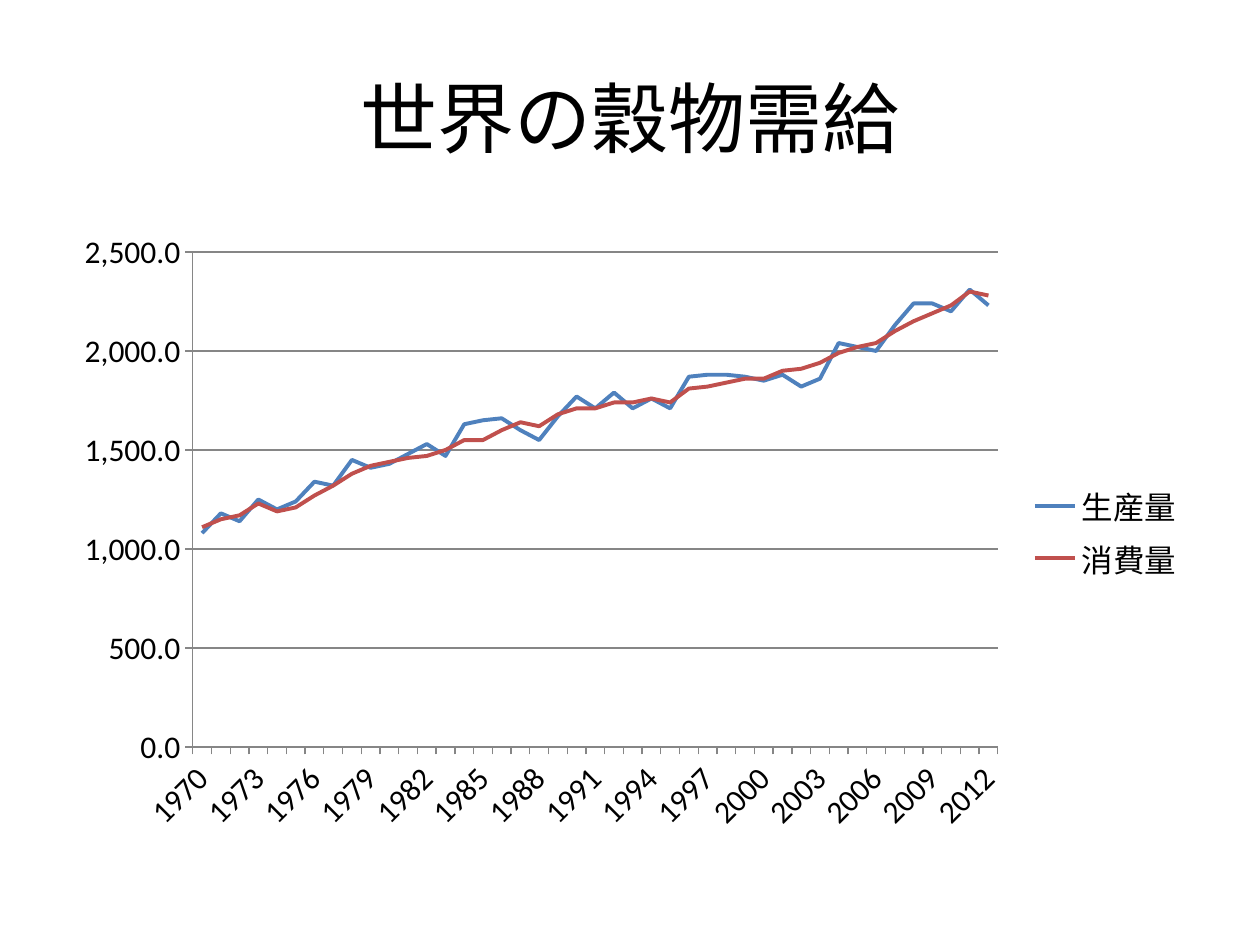
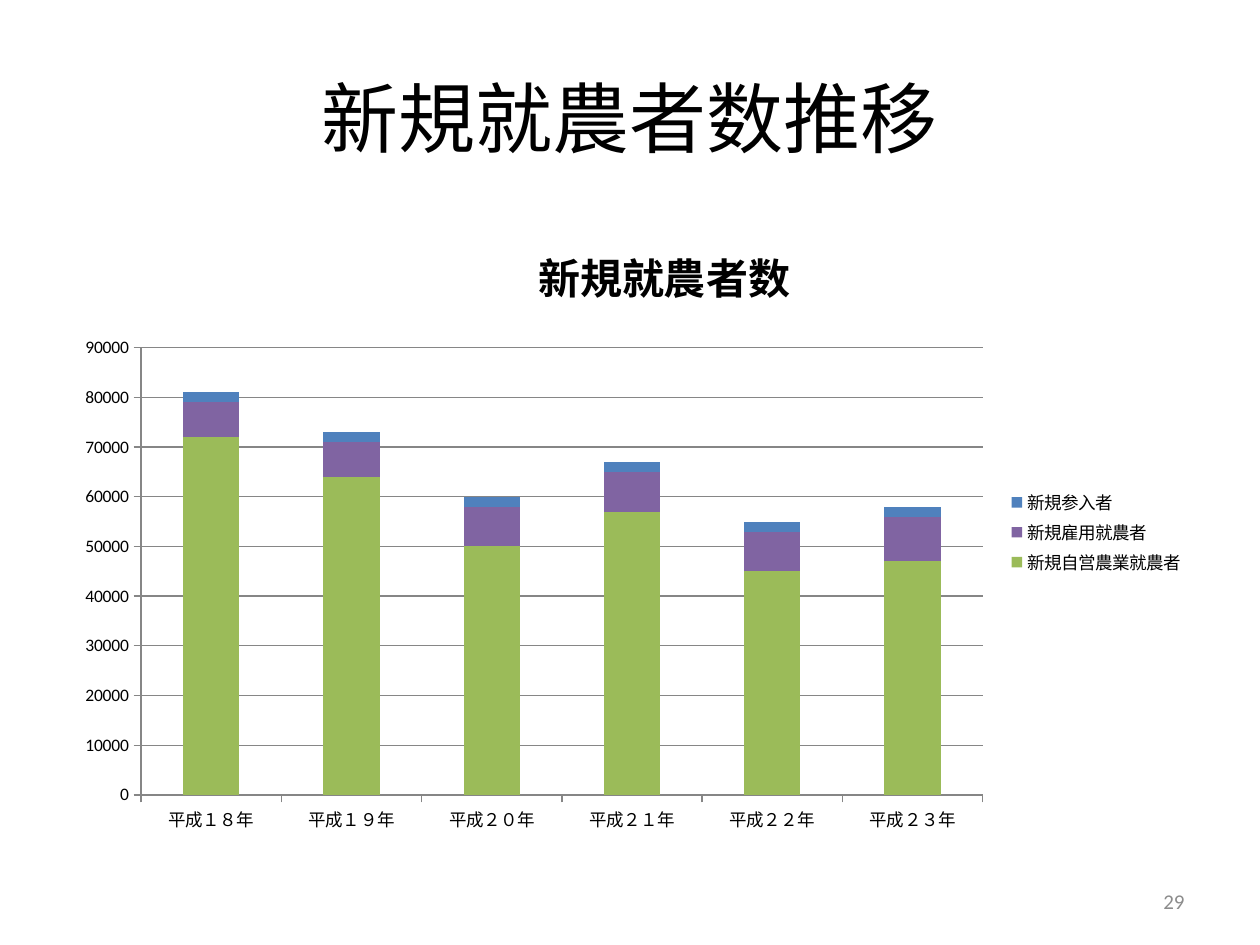
from itertools import chain
from typing import NamedTuple

from lxml import etree
from pptx import Presentation
from pptx.chart.data import CategoryChartData
from pptx.dml.color import RGBColor
from pptx.enum.chart import XL_CHART_TYPE as ChartType
from pptx.enum.chart import XL_LEGEND_POSITION as LegendPosition
from pptx.enum.chart import XL_TICK_MARK as TickMark
from pptx.enum.text import MSO_ANCHOR as Anchor
from pptx.enum.text import PP_ALIGN as Align
from pptx.oxml.ns import qn
from pptx.util import Inches, Pt

# Shared look
FONT = "Calibri"
BLACK = RGBColor(0x00, 0x00, 0x00)
GRAY = RGBColor(0x8C, 0x8C, 0x8C)
AXIS_GRAY = RGBColor(0x86, 0x86, 0x86)
BLUE = RGBColor(0x4F, 0x81, 0xBD)
RED = RGBColor(0xC0, 0x50, 0x4D)
GREEN = RGBColor(0x9B, 0xBB, 0x59)
PURPLE = RGBColor(0x80, 0x64, 0xA2)
TITLE_SIZE, HEADING_SIZE, NUMBER_SIZE = 44, 24, 12
AXIS_WIDTH, DATA_LINE_WIDTH = Pt(0.75), Pt(2.25)

# Shared places in inches: left, top, width, height
TITLE_BOX = (0.5, 0.3, 9, 1.25)
CHART_BOX = (0.5, 1.75, 9, 4.95)
NUMBER_BOX = (7.17, 6.95, 2.33, 0.4)


class Series(NamedTuple):
    name: str
    color: RGBColor
    values: list


class ValueScale(NamedTuple):
    maximum: int
    step: int
    number_format: str


# Grain: one row per decade, one value per year
FIRST_YEAR = 1970
PRODUCTION_BY_DECADE = [
    [1080, 1180, 1140, 1250, 1200, 1240, 1340, 1320, 1450, 1410],
    [1430, 1480, 1530, 1470, 1630, 1650, 1660, 1600, 1550, 1670],
    [1770, 1710, 1790, 1710, 1760, 1710, 1870, 1880, 1880, 1870],
    [1850, 1880, 1820, 1860, 2040, 2020, 2000, 2130, 2240, 2240],
    [2200, 2310, 2230],
]
CONSUMPTION_BY_DECADE = [
    [1110, 1150, 1170, 1230, 1190, 1210, 1270, 1320, 1380, 1420],
    [1440, 1460, 1470, 1500, 1550, 1550, 1600, 1640, 1620, 1680],
    [1710, 1710, 1740, 1740, 1760, 1740, 1810, 1820, 1840, 1860],
    [1860, 1900, 1910, 1940, 1990, 2020, 2040, 2100, 2150, 2190],
    [2230, 2300, 2280],
]
GRAIN = [
    Series(name, color, list(chain.from_iterable(decades)))
    for name, color, decades in (
        ("生産量", BLUE, PRODUCTION_BY_DECADE),
        ("消費量", RED, CONSUMPTION_BY_DECADE),
    )
]
GRAIN_YEARS = [str(FIRST_YEAR + offset) for offset in range(len(GRAIN[0].values))]
GRAIN_SCALE = ValueScale(2500, 500, "#,##0.0")

# New farmers: Heisei years 18 to 23, written in full-width digits
FULL_WIDTH = str.maketrans("0123456789", "０１２３４５６７８９")
FARMER_YEARS = [f"平成{year}年".translate(FULL_WIDTH) for year in range(18, 24)]
FARMERS = [
    Series("新規自営農業就農者", GREEN, [72000, 64000, 50000, 57000, 45000, 47000]),
    Series("新規雇用就農者", PURPLE, [7000, 7000, 8000, 8000, 8000, 9000]),
    Series("新規参入者", BLUE, [2000] * len(FARMER_YEARS)),
]
FARMER_SCALE = ValueScale(90000, 10000, "General")


# Text
def style_font(font, size, color=BLACK, bold=False):
    font.name = FONT
    font.size = Pt(size)
    font.bold = bold
    font.color.rgb = color


def write_line(box, text, size, color, align):
    frame = box.text_frame
    frame.text = text
    frame.word_wrap = True
    frame.vertical_anchor = Anchor.MIDDLE
    para = frame.paragraphs[0]
    para.alignment = align
    style_font(para.runs[0].font, size, color)


def add_titled_page(deck, title):
    page = deck.slides.add_slide(deck.slide_layouts.get_by_name("Title Only"))
    box = page.shapes.title
    box.left, box.top, box.width, box.height = map(Inches, TITLE_BOX)
    write_line(box, title, TITLE_SIZE, BLACK, Align.CENTER)
    return page


def add_page_number(page, number):
    box = page.shapes.add_textbox(*map(Inches, NUMBER_BOX))
    write_line(box, str(number), NUMBER_SIZE, GRAY, Align.RIGHT)


# Chart parts
def place_in_chart(part, index, place, **settings):
    """Place a chart part; place is left, top and maybe width, height in inches."""
    for old in part.findall(qn("c:layout")):
        part.remove(old)
    layout = etree.Element(qn("c:layout"))
    manual = etree.SubElement(layout, qn("c:manualLayout"))
    settings.update(xMode="edge", yMode="edge")
    # The file holds each length as a fraction of the chart's size
    chart_size = CHART_BOX[2:] * 2
    for name, length, whole in zip("xywh", place, chart_size):
        settings[name] = length / whole
    for name, value in settings.items():
        etree.SubElement(manual, qn(f"c:{name}")).set("val", str(value))
    part.insert(index, layout)


def style_axis_line(line):
    line.color.rgb = AXIS_GRAY
    line.width = AXIS_WIDTH


def style_axes(chart, scale):
    values = chart.value_axis
    values.minimum_scale = 0
    values.maximum_scale = scale.maximum
    values.major_unit = scale.step
    values.tick_labels.number_format = scale.number_format
    values.tick_labels.number_format_is_linked = False
    values.has_major_gridlines = True
    style_axis_line(values.major_gridlines.format.line)
    for axis in (values, chart.category_axis):
        axis.major_tick_mark = TickMark.OUTSIDE
        axis.minor_tick_mark = TickMark.NONE
        style_axis_line(axis.format.line)


def add_legend(chart):
    chart.has_legend = True
    chart.legend.position = LegendPosition.RIGHT
    chart.legend.include_in_layout = False


def add_heading(chart, text, place):
    chart.has_title = True
    heading = chart.chart_title
    heading.text_frame.text = text
    span = heading.text_frame.paragraphs[0].runs[0]
    style_font(span.font, HEADING_SIZE, bold=True)
    place_in_chart(heading._element, 1, place)


def slant_labels(axis, size, step):
    """Show every step-th category label, turned by 45 degrees."""
    axis.tick_labels.font.size = Pt(size)
    element = axis._element
    element.find(f"{qn('c:txPr')}/{qn('a:bodyPr')}").set("rot", str(-45 * 60000))
    skip = etree.Element(qn("c:tickLblSkip"))
    skip.set("val", str(step))
    element.find(qn("c:noMultiLvlLbl")).addprevious(skip)


def add_chart(page, kind, categories, series_list, scale, size, plot_box):
    data = CategoryChartData()
    data.categories = categories
    for series in series_list:
        data.add_series(series.name, series.values)
    chart = page.shapes.add_chart(kind, *map(Inches, CHART_BOX), data).chart
    chart.has_title = False
    style_font(chart.font, size)
    style_axes(chart, scale)
    add_legend(chart)
    plot_area = chart.plots[0]._element.getparent()
    place_in_chart(plot_area, 0, plot_box, layoutTarget="inner")
    return chart


# Charts of this deck
def add_grain_chart(page):
    label_size = 18
    chart = add_chart(page, ChartType.LINE, GRAIN_YEARS, GRAIN, GRAIN_SCALE,
                      label_size, plot_box=(1.03, 0.25, 6.39, 3.93))
    slant_labels(chart.category_axis, label_size, step=3)
    for line, series in zip(chart.plots[0].series, GRAIN):
        line.smooth = False
        line.format.line.color.rgb = series.color
        line.format.line.width = DATA_LINE_WIDTH


def add_farmer_chart(page):
    chart = add_chart(page, ChartType.COLUMN_STACKED, FARMER_YEARS, FARMERS,
                      FARMER_SCALE, 10, plot_box=(0.62, 1.01, 6.68, 3.55))
    add_heading(chart, "新規就農者数", place=(3.71, 0.1))
    plot = chart.plots[0]
    plot.vary_by_categories = False
    plot.overlap = 100
    plot.gap_width = 150
    for column, series in zip(plot.series, FARMERS):
        column.format.fill.solid()
        column.format.fill.fore_color.rgb = series.color


def main():
    deck = Presentation()
    deck.slide_width, deck.slide_height = Inches(10), Inches(7.5)

    # World grain supply and demand
    grain_page = add_titled_page(deck, "世界の穀物需給")
    add_grain_chart(grain_page)

    # New farmers by year
    farmer_page = add_titled_page(deck, "新規就農者数推移")
    add_farmer_chart(farmer_page)
    add_page_number(farmer_page, 29)

    deck.save("out.pptx")


if __name__ == "__main__":
    main()
